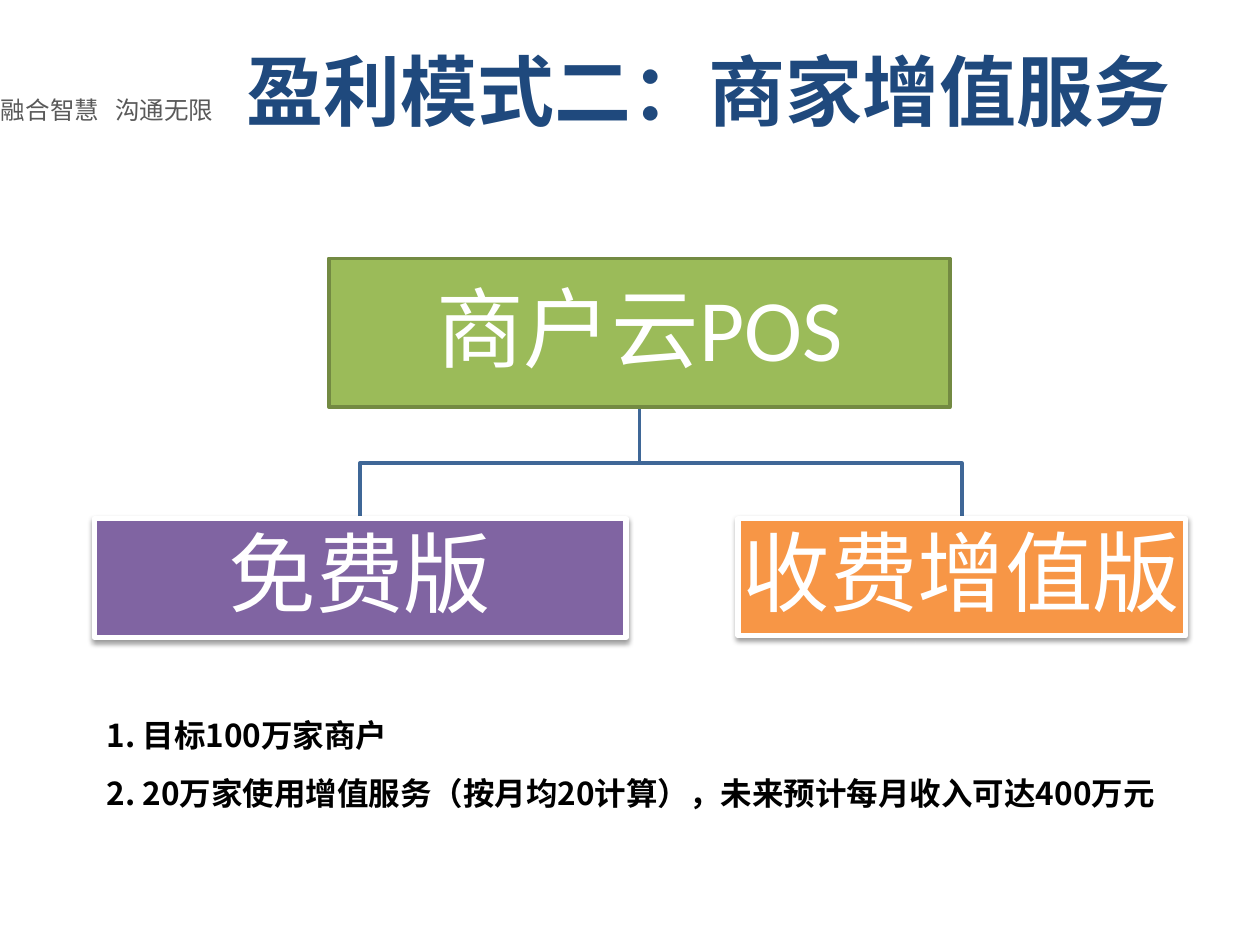
from lxml import etree
from pptx import Presentation
from pptx import util as u
from pptx.dml.color import RGBColor
from pptx.enum import shapes, text
from pptx.oxml import parse_xml
from pptx.oxml.ns import nsdecls, qn

SANS = "Noto Sans CJK SC"


def color(value):
    return RGBColor.from_string(value)


def write(shape, lines, font_name, size, fill, bold=False):
    frame = shape.text_frame
    frame.text = "\n".join(lines)
    for paragraph in frame.paragraphs:
        for run in paragraph.runs:
            run.font.name = font_name
            run.font.size = u.Pt(size)
            run.font.bold = bold
            run.font.color.rgb = color(fill)
            east_asian = etree.SubElement(run.font._element, qn("a:ea"))
            east_asian.set("typeface", font_name)
    return frame


presentation = Presentation()
presentation.slide_width = u.Cm(25.4)
presentation.slide_height = u.Cm(19.05)
slide = presentation.slides.add_slide(presentation.slide_layouts[6])

slogan = slide.shapes.add_textbox(u.Cm(-0.23), u.Cm(1.8), u.Cm(5.36), u.Cm(0.86))
frame = write(slogan, ["融合智慧\t沟通无限"], "Noto Sans CJK JP", 14, "595959")
properties = frame.paragraphs[0]._p.get_or_add_pPr()
tabs = etree.SubElement(properties, qn("a:tabLst"))
etree.SubElement(tabs, qn("a:tab"), pos=str(u.Cm(2.3)), algn="l")

title = slide.shapes.add_textbox(u.Cm(2.87), u.Cm(0.76), u.Cm(22.86), u.Cm(3.18))
frame = write(title, ["盈利模式二：商家增值服务"], SANS, 44, "1F497D", True)
frame.word_wrap = True
frame.paragraphs[0].alignment = text.PP_ALIGN.CENTER

root_left, root_top, root_width, root_height = 6.63, 5.21, 12.52, 3
child_top = 10.46
boxes = [
    ("商户云POS", root_left, root_top, root_width, root_height, "9BBB59", "738A42", 2),
    ("免费版", 1.9, child_top, 10.72, 2.39, "8064A2", "FFFFFF", 3),
    ("收费增值版", 14.88, child_top, 9.02, 2.36, "F79646", "FFFFFF", 3),
]

root_center = root_left + root_width / 2
root_bottom = root_top + root_height
branch_y = (root_bottom + child_top) / 2
for label, left, top, width, *style in reversed(boxes[1:]):
    center = left + width / 2
    builder = slide.shapes.build_freeform(u.Cm(root_center), u.Cm(root_bottom))
    corners = [(root_center, branch_y), (center, branch_y), (center, child_top)]
    builder.add_line_segments([(u.Cm(x), u.Cm(y)) for x, y in corners], close=False)
    branch = builder.convert_to_shape()
    branch.shadow.inherit = False
    branch.fill.background()
    branch.line.color.rgb = color("3F6797")
    branch.line.width = u.Pt(2)

for label, left, top, width, height, fill, outline, weight in boxes:
    box = slide.shapes.add_shape(
        shapes.MSO_SHAPE.RECTANGLE, u.Cm(left), u.Cm(top), u.Cm(width), u.Cm(height)
    )
    box.shadow.inherit = False
    box.fill.solid()
    box.fill.fore_color.rgb = color(fill)
    box.line.color.rgb = color(outline)
    box.line.width = u.Pt(weight)
    if top == child_top:
        effects = box._element.spPr.find(qn("a:effectLst"))
        effects.append(parse_xml(
            f'<a:outerShdw {nsdecls("a")} blurRad="{u.Pt(3.1)}" dist="{u.Pt(1.6)}" '
            'dir="5400000" rotWithShape="0"><a:srgbClr val="000000">'
            '<a:alpha val="38000"/></a:srgbClr></a:outerShdw>'
        ))
    frame = write(box, [label], "Calibri", 50, "FFFFFF")
    frame.word_wrap = False
    frame.vertical_anchor = text.MSO_ANCHOR.MIDDLE
    frame.margin_left = frame.margin_right = u.Cm(0.08)
    frame.margin_top = frame.margin_bottom = u.Cm(0.08)
    frame.paragraphs[0].alignment = text.PP_ALIGN.CENTER
    frame.paragraphs[0].line_spacing = 0.9

goals = slide.shapes.add_textbox(u.Cm(1.9), u.Cm(13.92), u.Cm(23), u.Cm(2.56))
goal_lines = [
    "1. 目标100万家商户",
    "2. 20万家使用增值服务（按月均20计算），未来预计每月收入可达400万元",
]
frame = write(goals, goal_lines, SANS, 18, "000000", True)
frame.word_wrap = True
for paragraph in frame.paragraphs:
    paragraph.line_spacing = u.Pt(32.8)

presentation.save("out.pptx")
